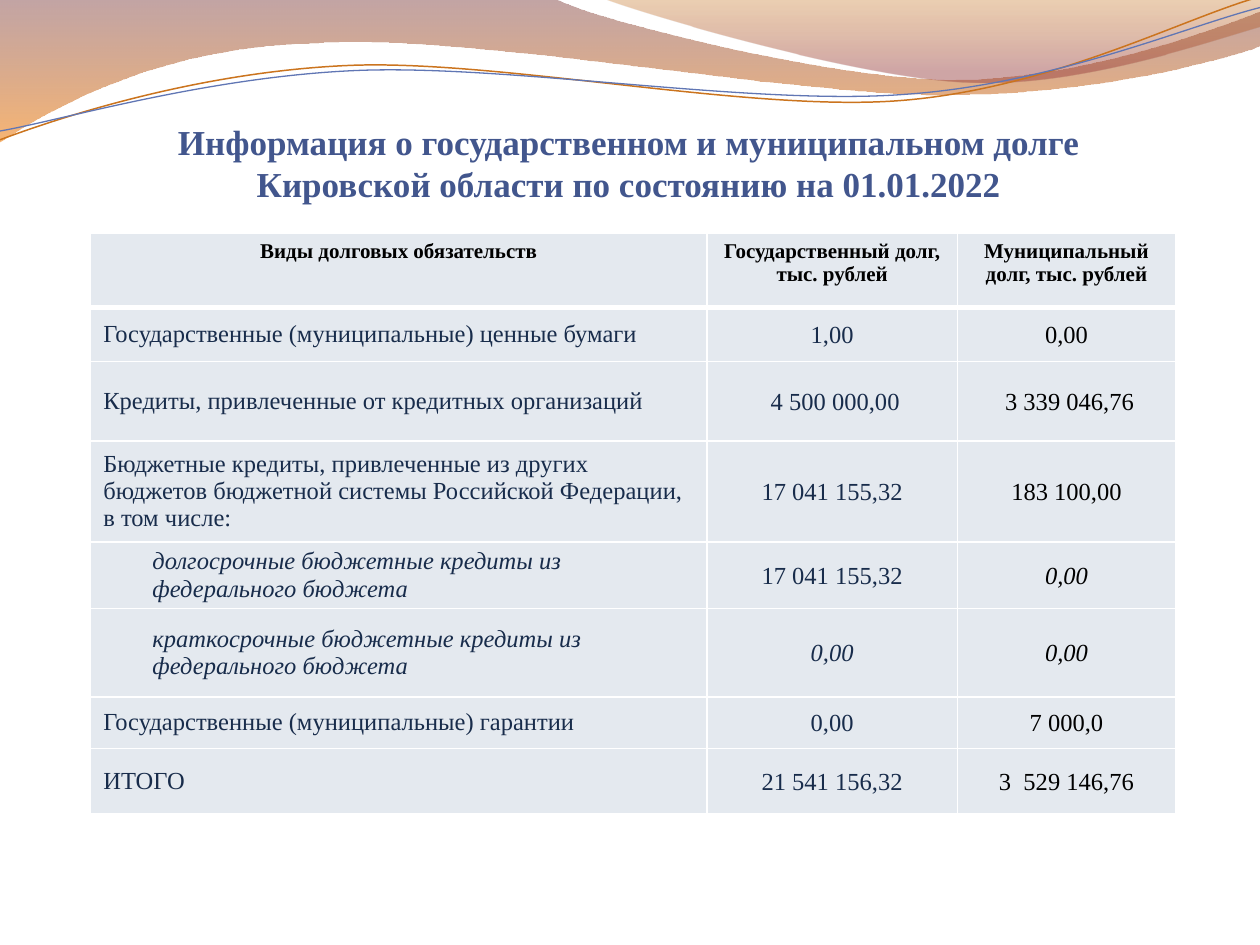
from lxml import etree
from pptx import Presentation
from pptx.dml.color import RGBColor
from pptx.enum import text
from pptx.oxml import parse_xml
from pptx.oxml.ns import nsdecls, qn
from pptx.util import Inches, Pt

FONT = "Times New Roman"
COLORS = {
    "title": "42568D", "navy": "182C4B", "black": "000000",
    "cell": "E4E9EF", "border": "FFFFFF", "orange": "CB741E", "blue": "6076B4",
    "maroon": "793737", "amber": "F07800", "rust": "C06203", "brick": "973B3B",
}

TITLE = ["Информация о государственном и муниципальном долге",
         "Кировской области по состоянию на 01.01.2022"]
HEADERS = ["Виды долговых обязательств", "Государственный долг, тыс. рублей",
           "Муниципальный долг, тыс. рублей"]
ROWS = [
    ("Государственные (муниципальные) ценные бумаги", "1,00", "0,00"),
    ("Кредиты, привлеченные от кредитных организаций", " 4 500 000,00", " 3 339 046,76"),
    ("Бюджетные кредиты, привлеченные из других бюджетов бюджетной системы "
     "Российской Федерации, \nв том числе:", "17 041 155,32", "183 100,00"),
    ("долгосрочные бюджетные кредиты из федерального бюджета", "17 041 155,32", "0,00"),
    ("краткосрочные бюджетные кредиты из федерального бюджета", "0,00", "0,00"),
    ("Государственные (муниципальные) гарантии", "0,00", "7 000,0"),
    ("ИТОГО", "21 541 156,32", "3  529 146,76"),
]
ITALIC_CELLS = {(4, 0), (4, 2), (5, 0), (5, 1), (5, 2)}
COLUMN_WIDTHS = [4.89, 1.99, 1.73]
ROW_HEIGHTS = [0.59, 0.43, 0.63, 0.8, 0.53, 0.7, 0.41, 0.52]

UNITS_PER_INCH = 100
WAVES = [
    ([(0, 0), (4.4, -0.01), (4.76, 0.17, 6.64, 0.63, 7.58, 0.63),
      (8.53, 0.63, 9.58, 0.26, 10, 0.09), (10.01, 0.36),
      (9.83, 0.44, 8.7, 0.76, 7.46, 0.75), (6.22, 0.75, 3.82, 0.28, 2.57, 0.34),
      (1.29, 0.36, 0.46, 0.83, -0.01, 1.13), (0, 0)],
     [(0, "maroon", 45), (100, "amber", 55)]),
    ([(4.79, -0.01), (5.09, 0.11, 6.82, 0.62, 7.69, 0.65),
      (8.56, 0.69, 9.61, 0.32, 10, 0.21), (10, 0), (4.79, -0.01)],
     [(0, "rust", 30), (80, "brick", 45)]),
]
STRANDS = [
    ([(0, 1.11), (0.48, 0.93, 1.58, 0.57, 2.77, 0.52),
      (3.95, 0.47, 5.93, 0.89, 7.13, 0.8), (8.33, 0.71, 9.38, 0.15, 9.98, -0.02)],
     "orange", 0.85),
    ([(0, 1.04), (0.47, 0.96, 1.64, 0.61, 2.83, 0.56),
      (4.03, 0.51, 5.97, 0.84, 7.17, 0.75), (8.36, 0.67, 9.41, 0.21, 10, 0.06)],
     "blue", 0.75),
]


def rgb(name):
    return RGBColor.from_string(COLORS[name])


def draw_curve(page, segments, close):
    points = [(round(segment[i] * UNITS_PER_INCH), round(segment[i + 1] * UNITS_PER_INCH))
              for segment in segments for i in range(0, len(segment), 2)]
    builder = page.shapes.build_freeform(*points[0], scale=Inches(1) / UNITS_PER_INCH)
    builder.add_line_segments(points[1:], close=close)
    shape = builder.convert_to_shape()
    shape.shadow.inherit = False
    shape.fill.background()
    lines = iter(list(shape._element.iter(qn("a:lnTo"))))
    for segment in segments[1:]:
        line = next(lines)
        if len(segment) == 6:
            line.tag = qn("a:cubicBezTo")
            for extra in (next(lines), next(lines)):
                line.append(extra[0])
                extra.getparent().remove(extra)
    return shape


def fill_gradient(shape, stops):
    marks = "".join(
        f'<a:gs pos="{place * 1000}"><a:srgbClr val="{COLORS[color]}">'
        f'<a:alpha val="{alpha * 1000}"/></a:srgbClr></a:gs>'
        for place, color, alpha in stops)
    gradient = parse_xml(f'<a:gradFill {nsdecls("a")} rotWithShape="1"><a:gsLst>{marks}'
                         '</a:gsLst><a:lin ang="5400000" scaled="0"/></a:gradFill>')
    properties = shape._element.spPr
    properties.replace(properties.find(qn("a:noFill")), gradient)


def write(para, content, size, color, bold=False, italic=False):
    for index, line in enumerate(content.split("\n")):
        if index:
            para.add_line_break()
        span = para.add_run()
        span.text = line
        span.font.name = FONT
        span.font.size = Pt(size)
        span.font.bold = bold
        span.font.italic = italic
        span.font.color.rgb = rgb(color)


def set_borders(cell, row):
    widths = {"L": 1, "R": 1, "T": 3 if row == 1 else 1, "B": 3 if row == 0 else 1}
    properties = cell._tc.get_or_add_tcPr()
    for index, (side, width) in enumerate(widths.items()):
        line = etree.Element(qn(f"a:ln{side}"), w=str(Pt(width)))
        fill = etree.SubElement(line, qn("a:solidFill"))
        etree.SubElement(fill, qn("a:srgbClr"), val=COLORS["border"])
        properties.insert(index, line)


def fill_cell(cell, row, column, content):
    cell.fill.solid()
    cell.fill.fore_color.rgb = rgb("cell")
    set_borders(cell, row)
    para = cell.text_frame.paragraphs[0]
    if row == 0 or column > 0:
        para.alignment = text.PP_ALIGN.CENTER
    if row == 0:
        write(para, content, 12, "black", bold=True)
        return
    cell.vertical_anchor = text.MSO_ANCHOR.MIDDLE
    if column > 0:
        cell.margin_left = cell.margin_right = cell.margin_top = Inches(0.01)
        cell.margin_bottom = 0
    elif (row, column) in ITALIC_CELLS:
        cell.margin_top = cell.margin_bottom = Inches(0.03)
        para._p.get_or_add_pPr().set("marL", str(Inches(0.39)))
    write(para, content, 14, "black" if column == 2 else "navy",
          italic=(row, column) in ITALIC_CELLS)


def add_title(page):
    box = page.shapes.add_textbox(Inches(0.57), Inches(0.68), Inches(8.84), Inches(0.94))
    frame = box.text_frame
    frame.word_wrap = True
    frame.vertical_anchor = text.MSO_ANCHOR.BOTTOM
    frame.margin_left = frame.margin_right = frame.margin_bottom = 0
    para = frame.paragraphs[0]
    para.alignment = text.PP_ALIGN.CENTER
    write(para, "\n".join(TITLE), 20, "title", bold=True)


def add_debt_table(page):
    table = page.shapes.add_table(
        len(ROW_HEIGHTS), len(COLUMN_WIDTHS), Inches(0.72), Inches(1.85),
        Inches(sum(COLUMN_WIDTHS)), Inches(sum(ROW_HEIGHTS))).table
    for column, width in zip(table.columns, COLUMN_WIDTHS):
        column.width = Inches(width)
    for row, height in zip(table.rows, ROW_HEIGHTS):
        row.height = Inches(height)
    for row, contents in enumerate([HEADERS, *ROWS]):
        for column, content in enumerate(contents):
            fill_cell(table.cell(row, column), row, column, content)


def main():
    deck = Presentation()
    deck.slide_width, deck.slide_height = Inches(10), Inches(7.5)
    page = deck.slides.add_slide(deck.slide_layouts[6])
    for segments, stops in WAVES:
        wave = draw_curve(page, segments, close=True)
        wave.line.fill.background()
        fill_gradient(wave, stops)
    for segments, color, width in STRANDS:
        strand = draw_curve(page, segments, close=False)
        strand.line.color.rgb = rgb(color)
        strand.line.width = Pt(width)
    add_title(page)
    add_debt_table(page)
    deck.save("out.pptx")


if __name__ == "__main__":
    main()
